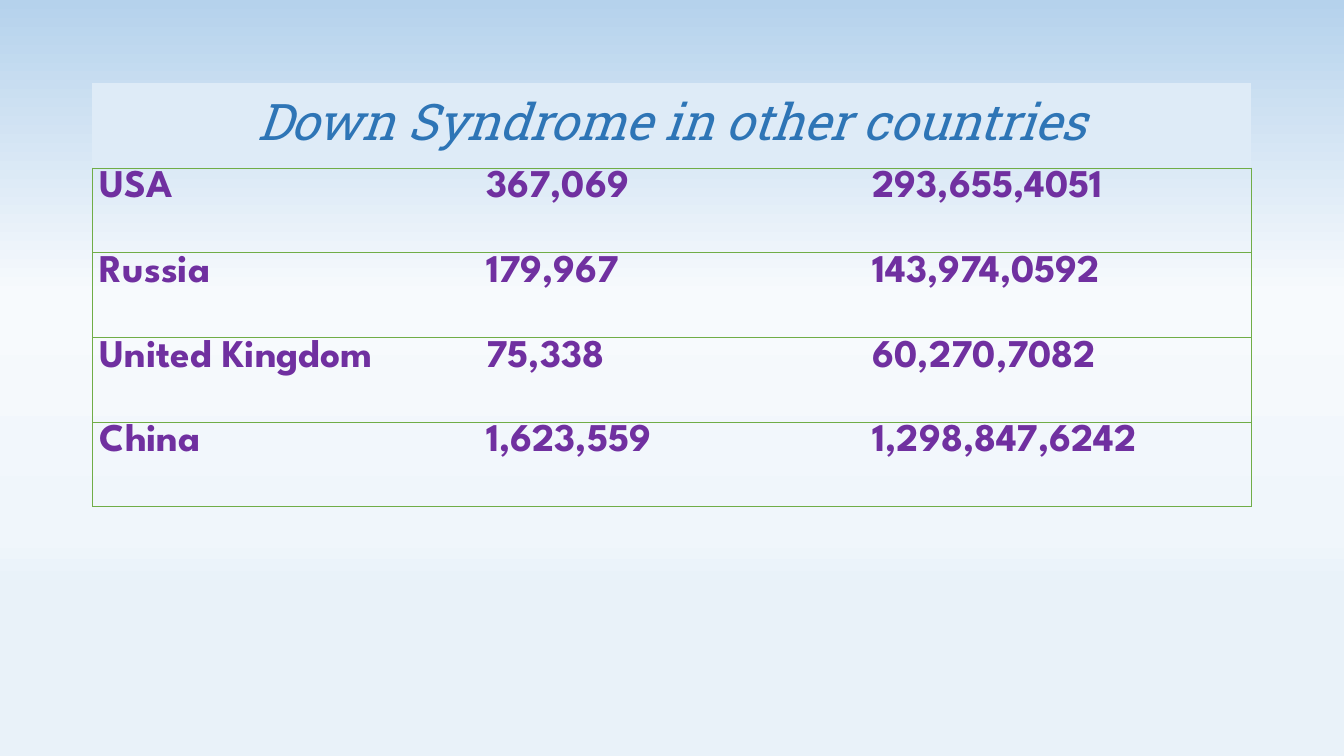
from dataclasses import dataclass

from lxml import etree
from pptx import Presentation
from pptx.dml import color
from pptx.enum import text
from pptx.oxml import ns
from pptx.util import Pt


@dataclass(frozen=True)
class Theme:
    title_font: str = "Roboto Slab"
    body_font: str = "League Spartan"
    title_size: int = 36
    body_size: int = 28
    title_color: str = "2E75B6"
    body_color: str = "7030A0"
    title_fill: str = "DEEBF7"
    border_color: str = "70AD47"
    border_width: float = 0.5
    background: tuple = ((23, "E9F2F9"), (29, "F0F6FB"), (61, "F7FAFD"), (100, "B5D2EC"))


THEME = Theme()
TITLE = "Down Syndrome in other countries"
COUNTRIES = (
    ("USA", "367,069", "293,655,4051"),
    ("Russia", "179,967", "143,974,0592"),
    ("United Kingdom", "75,338", "60,270,7082"),
    ("China", "1,623,559", "1,298,847,6242"),
)
COLUMN_COUNT = 3
COLUMN_WIDTH, ROW_HEIGHT = 276, 60.5
TABLE_LEFT, TABLE_TOP = 66, 59.4


def add_child(parent, tag, **attributes):
    return etree.SubElement(parent, ns.qn(tag), attributes)


def paint_background(slide):
    fill = slide.background.fill
    fill.gradient()
    fill.gradient_angle = 90
    stops = next(slide.element.iter(ns.qn("a:gsLst")))
    for stop in list(stops):
        stops.remove(stop)
    for position, value in THEME.background:
        stop = add_child(stops, "a:gs", pos=str(position * 1000))
        add_child(stop, "a:srgbClr", val=value)


def set_borders(cell, visible_sides):
    """Draw the named sides (L, R, T, B) and clear the others."""
    properties = cell._tc.get_or_add_tcPr()
    for side in "LRTB":
        line = add_child(properties, f"a:ln{side}", w=str(Pt(THEME.border_width)))
        if side in visible_sides:
            fill = add_child(line, "a:solidFill")
            add_child(fill, "a:srgbClr", val=THEME.border_color)
        else:
            add_child(line, "a:noFill")


def format_cell(cell, wording, borders):
    set_borders(cell, borders)
    cell.fill.background()
    cell.margin_left = cell.margin_right = Pt(5.4)
    cell.margin_top = cell.margin_bottom = 0
    cell.text = wording
    paragraph = cell.text_frame.paragraphs[0]
    paragraph.line_spacing = 1.07
    return paragraph


def set_font(paragraph, name, size, value, bold=False, italic=False):
    font = paragraph.font
    font.name, font.size = name, Pt(size)
    font.bold, font.italic = bold, italic
    font.color.rgb = color.RGBColor.from_string(value)


def fill_title_row(table):
    for column in range(COLUMN_COUNT):
        set_borders(table.cell(0, column), "LRTB")
    cell = table.cell(0, 0)
    cell.merge(table.cell(0, COLUMN_COUNT - 1))
    paragraph = format_cell(cell, TITLE, "")
    cell.fill.solid()
    cell.fill.fore_color.rgb = color.RGBColor.from_string(THEME.title_fill)
    paragraph.alignment = text.PP_ALIGN.CENTER
    set_font(paragraph, THEME.title_font, THEME.title_size, THEME.title_color, italic=True)


def fill_country_row(table, row, values):
    for column, value in enumerate(values):
        left = "L" if column == 0 else ""
        right = "R" if column == COLUMN_COUNT - 1 else ""
        paragraph = format_cell(table.cell(row, column), value, left + right + "TB")
        set_font(paragraph, THEME.body_font, THEME.body_size, THEME.body_color, bold=True)


def add_country_table(slide):
    row_count = len(COUNTRIES) + 1
    table = slide.shapes.add_table(
        row_count, COLUMN_COUNT, Pt(TABLE_LEFT), Pt(TABLE_TOP),
        Pt(COLUMN_WIDTH * COLUMN_COUNT), Pt(ROW_HEIGHT * row_count),
    ).table
    table.first_row = table.horz_banding = False
    for row in table.rows:
        row.height = Pt(ROW_HEIGHT)
    fill_title_row(table)
    for row, values in enumerate(COUNTRIES, start=1):
        fill_country_row(table, row, values)


def main():
    presentation = Presentation()
    presentation.slide_width, presentation.slide_height = Pt(960), Pt(540)
    slide = presentation.slides.add_slide(presentation.slide_layouts[6])
    paint_background(slide)
    add_country_table(slide)
    presentation.save("out.pptx")


if __name__ == "__main__":
    main()
